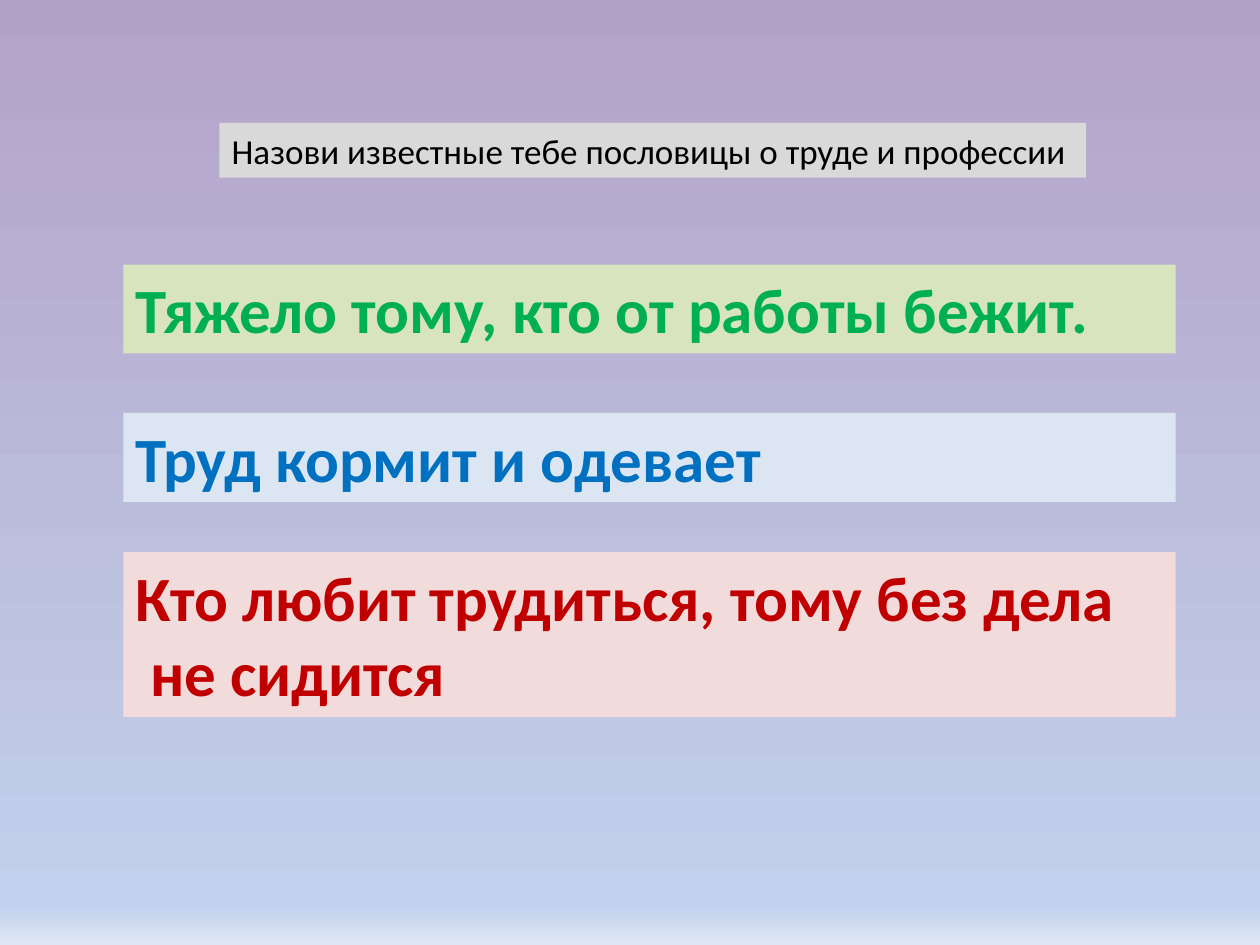
from copy import deepcopy

from pptx import Presentation
from pptx import util as u
from pptx.dml.color import RGBColor
from pptx.enum import text
from pptx.oxml.ns import qn

WIDTH, HEIGHT = u.Inches(10), u.Inches(7.5)
FONT = "Calibri"
BACKGROUND_STOPS = [(0, "B3A2C7"), (0.96, "C2D1ED"), (1, "E1E8F5")]

# Shares of the slide's size
PROVERB_LEFT, PROVERB_WIDTH = 0.098, 0.835
ONE_LINE, TWO_LINES = 0.094, 0.175

# Top, height, fill, text colour, lines
PROVERBS = [
    (0.28, ONE_LINE, "D7E4BD", "00B050", ["Тяжело тому, кто от работы бежит."]),
    (0.437, ONE_LINE, "DCE6F2", "0070C0", ["Труд кормит и одевает"]),
    (0.584, TWO_LINES, "F2DCDB", "C00000",
     ["Кто любит трудиться, тому без дела", " не сидится"]),
]


def color(hex_string):
    return RGBColor.from_string(hex_string)


def paint_background(slide, stops):
    """Fill the slide with a gradient that runs from top to bottom."""
    fill = slide.background.fill
    fill.gradient()
    fill.gradient_angle = 270
    stop_list = next(slide.element.iter(qn("a:gsLst")))
    for _ in range(len(stops) - len(stop_list)):
        stop_list.append(deepcopy(stop_list[-1]))
    for stop, (position, hex_string) in zip(fill.gradient_stops, stops):
        stop.position = position
        stop.color.rgb = color(hex_string)


def add_label(slide, box, lines, fill, font_color, size, bold=False, wrap=True):
    """Add a filled text box; box is left, top, width, height as shares."""
    left, top, width, height = box
    shape = slide.shapes.add_textbox(
        round(left * WIDTH), round(top * HEIGHT),
        round(width * WIDTH), round(height * HEIGHT))
    shape.fill.solid()
    shape.fill.fore_color.rgb = color(fill)
    frame = shape.text_frame
    frame.word_wrap = wrap
    frame.auto_size = text.MSO_AUTO_SIZE.SHAPE_TO_FIT_TEXT
    paragraph = frame.paragraphs[0]
    for number, line in enumerate(lines):
        if number:
            paragraph.add_line_break()
        run = paragraph.add_run()
        run.text = line
        run.font.name = FONT
        run.font.size = u.Pt(size)
        run.font.bold = bold
        run.font.color.rgb = color(font_color)


def main():
    presentation = Presentation()
    presentation.slide_width, presentation.slide_height = WIDTH, HEIGHT
    slide = presentation.slides.add_slide(presentation.slide_layouts[6])
    paint_background(slide, BACKGROUND_STOPS)
    add_label(slide, (0.174, 0.13, 0.688, 0.058),
              ["Назови известные тебе пословицы о труде и профессии"],
              "D9D9D9", "000000", 20, wrap=False)
    for top, height, fill, font_color, lines in PROVERBS:
        add_label(slide, (PROVERB_LEFT, top, PROVERB_WIDTH, height),
                  lines, fill, font_color, 36, bold=True)
    presentation.save("out.pptx")


if __name__ == "__main__":
    main()
